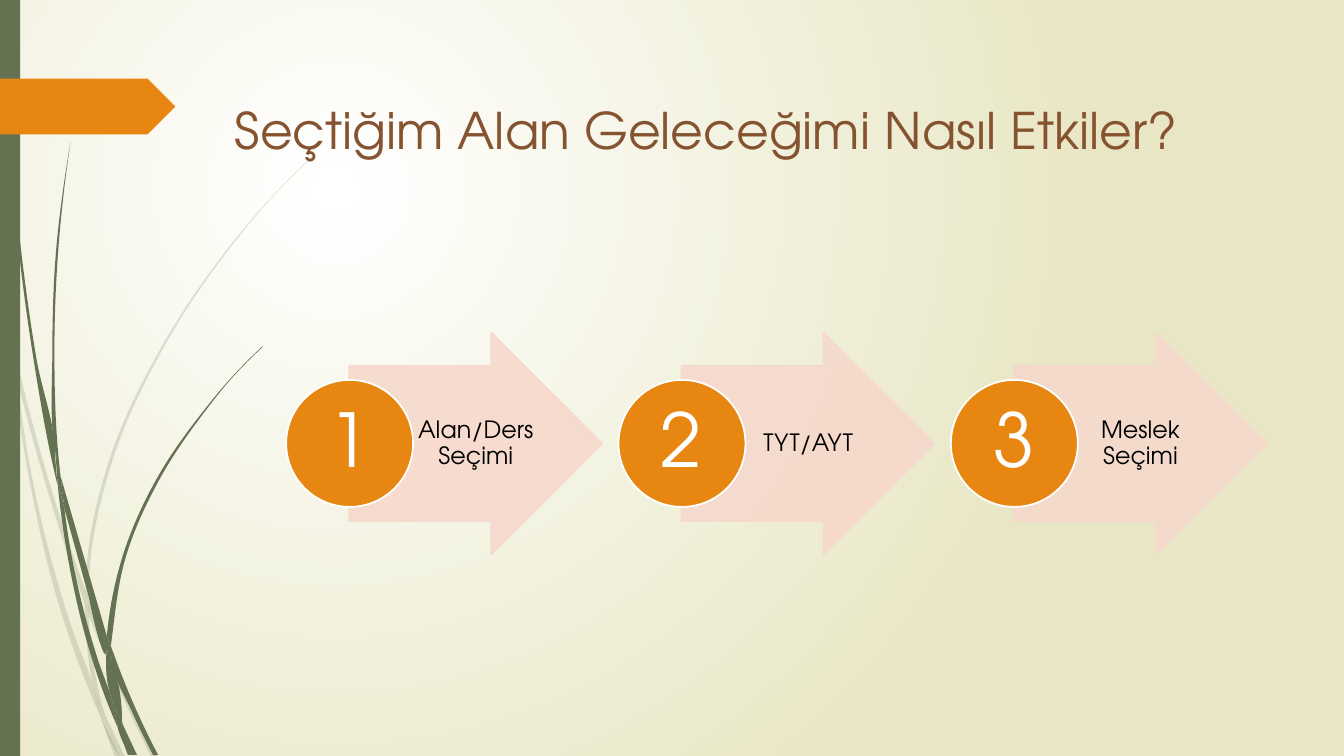
from dataclasses import dataclass
from math import hypot

from lxml import etree
from pptx import Presentation
from pptx.dml.color import RGBColor
from pptx.enum import shapes, text
from pptx.oxml.ns import qn
from pptx.util import Pt

Point = tuple[float, float]
Edge = list[Point]


@dataclass(frozen=True)
class Theme:
    font: str = "TeX Gyre Adventor"
    green: str = "647252"
    orange: str = "E78712"
    peach: str = "F6D9CC"
    brown: str = "865331"
    white: str = "FFFFFF"
    black: str = "000000"
    sand: str = "E8E6C4"
    title_size: float = 36
    label_size: float = 17
    number_size: float = 53
    outline: float = 1.25


@dataclass(frozen=True)
class Box:
    left: float
    top: float
    width: float
    height: float

    def lengths(self, offset: float = 0) -> list[int]:
        return [Pt(value) for value in (self.left + offset, self.top, self.width, self.height)]


@dataclass(frozen=True)
class Blade:
    """A piece of grass between two smooth edges, in points."""
    first: Edge
    second: Edge


THEME = Theme()
STEP_LABELS = ["Alan/Ders Seçimi", "TYT/AYT", "Meslek Seçimi"]
STEP_PITCH = 237.4
ARROW = Box(249.4, 237.6, 180.7, 158.4)
LABEL = Box(294.5, 261.4, 88.6, 110.9)
CIRCLE = Box(204.4, 271.4, 90.7, 90.7)
NUMBER = Box(217.4, 284.4, 64.1, 64.1)

PALE_GRASS = [
    Blade([(7.9, 252), (6.5, 231.8), (0, 203)], [(0, 215.3), (7.2, 247.7)]),
    Blade([(12.2, 270.7), (41.8, 375.8), (60.5, 431.3)], [(61.2, 421.9), (44.6, 374.4), (10.1, 248.4)]),
    Blade([(63.4, 439.2), (88.6, 499.7), (108, 540.7)],
          [(111.6, 540.7), (91.4, 498.2), (66.2, 437), (63.4, 429.1)]),
    Blade([(75.6, 511.9), (85.7, 540.7)], [(89.3, 540.7)]),
    Blade([(7.9, 252), (20.2, 338.4), (46.8, 447.1), (66.2, 499), (72.7, 514.1)],
          [(71.3, 509), (67, 491.8), (50.4, 445.7), (22.3, 337.7), (12.2, 270.7)]),
    Blade([(60.5, 431.3), (62.6, 465.1), (67, 491.8), (69.1, 498.2), (75.6, 511.9)],
          [(74.2, 508.3), (65.5, 465.1), (63.4, 439.2), (63.4, 437.8)]),
    Blade([(63.4, 429.1), (63.4, 420.5), (79.2, 332.6), (115.2, 251.3), (164.9, 176.4), (193, 142.6), (224.6, 110.9)],
          [(224.6, 110.2), (193, 141.8), (164.2, 175.7), (113.8, 250.6), (77, 331.9), (61.2, 420.5), (61.2, 421.9)]),
    Blade([(72.7, 514.1), (82.1, 540.7)], [(85.7, 540.7)]),
    Blade([(63.4, 439.2), (63.4, 429.1), (61.2, 421.9)], [(60.5, 431.3), (63.4, 437.8)]),
    Blade([(67, 491.8), (71.3, 509), (72.7, 514.1), (85.7, 540.7)], [(75.6, 511.9), (69.1, 498.2)]),
]
DARK_GRASS = [
    Blade([(2.2, 0), (2.9, 34.6), (5, 79.2), (12.2, 167.8), (23.8, 255.6), (40.3, 343.4), (41, 346.3)],
          [(39.6, 329), (39.6, 326.2), (25.9, 255.6), (13.7, 167), (5.8, 78.5), (3.6, 34.6), (2.9, 0)]),
    Blade([(43.2, 339.8), (46.1, 363.6)], [(63.4, 426.2), (76.3, 464.4), (76.3, 454.3), (67, 424.8), (43.2, 339.8)][:2]
          + [(76.3, 454.3)]),
    Blade([(79.2, 461.5), (79.9, 472.3), (95, 509.8), (109.4, 539.3)], [(113, 539.3), (97.9, 508.3), (81.4, 467.3)]),
    Blade([(41, 343.4), (49, 401), (67, 474.5), (79.9, 509.8), (84.2, 519.8)],
          [(83.5, 516.2), (79.2, 497.5), (70.6, 473), (51.8, 400.3), (46.1, 363.6)]),
    Blade([(43.2, 339.8), (41.8, 326.2), (38.9, 251.3), (41.8, 176.4), (45.4, 139), (50.4, 101.5)],
          [(50.4, 101.5), (44.6, 139), (40.3, 176.4), (37.4, 251.3), (39.6, 323.3), (43.2, 339.8)]),
    Blade([(87.8, 517.7), (95.8, 539.3)], [(97.9, 539.3)]),
    Blade([(41, 343.4), (46.1, 363.6)], [(43.2, 339.8), (39.6, 323.3)]),
    Blade([(79.2, 461.5), (79.9, 455.8), (90, 397.4), (113.8, 342.7), (147.6, 292.3), (166.3, 269.3), (187.9, 247.7)],
          [(187.2, 247.7), (166.3, 268.6), (146.9, 291.6), (112.3, 341.3), (87.8, 396.7), (76.3, 454.3)]),
    Blade([(84.2, 519.8), (91.4, 539.3)], [(94.3, 539.3)]),
    Blade([(76.3, 464.4), (79.2, 497.5), (83.5, 508.3), (87.8, 517.7)], [(87.1, 515.5), (79.9, 472.3), (78.5, 468.7)]),
    Blade([(76.3, 464.4), (79.9, 472.3)], [(79.2, 461.5), (76.3, 454.3)]),
    Blade([(79.2, 497.5), (83.5, 516.2), (84.2, 519.8), (93.6, 539.3)], [(95.8, 539.3), (87.8, 517.7), (83.5, 508.3)]),
]


def unit(dx: float, dy: float) -> Point:
    length = hypot(dx, dy) or 1
    return dx / length, dy / length


def curve_controls(edge: Edge) -> list[list[Point]]:
    """Give the two control points of each curve along a smooth edge."""
    pairs = list(zip(edge, edge[1:]))
    chords = [unit(b[0] - a[0], b[1] - a[1]) for a, b in pairs]
    sizes = [hypot(b[0] - a[0], b[1] - a[1]) for a, b in pairs]
    inner = [unit(*(u * sizes[i + 1] + v * sizes[i] for u, v in zip(chords[i], chords[i + 1])))
             for i in range(len(chords) - 1)]
    if not inner:
        inner = chords[:1]
    tangents = ([unit(*(2 * c - t for c, t in zip(chords[0], inner[0])))] + inner[:len(chords) - 1]
                + [unit(*(2 * c - t for c, t in zip(chords[-1], inner[-1])))]) if chords else []
    return [[(a[0] + s[0] * size / 3, a[1] + s[1] * size / 3), (b[0] - e[0] * size / 3, b[1] - e[1] * size / 3)]
            for (a, b), size, s, e in zip(pairs, sizes, tangents, tangents[1:])]


def paint(shape, fill: str, line: str | None = None, opacity: int = 100) -> None:
    shape.shadow.inherit = False
    shape.fill.solid()
    shape.fill.fore_color.rgb = RGBColor.from_string(fill)
    if line:
        shape.line.color.rgb = RGBColor.from_string(line)
        shape.line.width = Pt(THEME.outline)
    else:
        shape.line.fill.background()
    if opacity < 100:
        for color in shape.element.spPr.iter(qn("a:srgbClr")):
            etree.SubElement(color, qn("a:alpha")).set("val", str(opacity * 1000))


def add_grass(slide, blades: list[Blade], opacity: int = 100) -> None:
    group = slide.shapes.add_group_shape()
    for blade in blades:
        outline = [(Pt(x), Pt(y)) for x, y in blade.first + blade.second]
        left, top = (min(values) for values in zip(*outline))
        builder = group.shapes.build_freeform(*outline[0])
        builder.add_line_segments(outline[1:], close=True)
        shape = builder.convert_to_shape()
        controls = curve_controls(blade.first) + [[]] + curve_controls(blade.second)
        for line, points in zip(list(shape.element.iter(qn("a:lnTo"))), controls):
            if points:
                curve = etree.Element(qn("a:cubicBezTo"))
                for x, y in points:
                    etree.SubElement(curve, qn("a:pt"), {"x": str(Pt(x) - left), "y": str(Pt(y) - top)})
                line.getparent().replace(line, curve)
                curve.append(line[0])
        paint(shape, THEME.green, opacity=opacity)


def write(frame, words: str, size: float, color: str, centred: bool = True) -> None:
    frame.text = words
    frame.word_wrap = True
    frame.auto_size = text.MSO_AUTO_SIZE.NONE
    frame.vertical_anchor = text.MSO_ANCHOR.MIDDLE if centred else text.MSO_ANCHOR.TOP
    paragraph = frame.paragraphs[0]
    paragraph.alignment = text.PP_ALIGN.CENTER if centred else text.PP_ALIGN.LEFT
    paragraph.line_spacing = 0.9 if centred else 1.0
    font = paragraph.runs[0].font
    font.name, font.size = THEME.font, Pt(size)
    font.color.rgb = RGBColor.from_string(color)


def add_text(slide, lengths: list[int], words: str, size: float, color: str, insets: list[float]) -> None:
    frame = slide.shapes.add_textbox(*lengths).text_frame
    write(frame, words, size, color)
    frame.margin_left, frame.margin_top, frame.margin_right, frame.margin_bottom = map(Pt, insets)


def add_step(slide, index: int, label: str) -> None:
    offset = index * STEP_PITCH
    arrow = slide.shapes.add_shape(shapes.MSO_SHAPE.RIGHT_ARROW, *ARROW.lengths(offset))
    arrow.adjustments[0], arrow.adjustments[1] = 0.7, 0.5
    paint(arrow, THEME.peach, THEME.peach, opacity=90)
    add_text(slide, LABEL.lengths(offset), label, THEME.label_size, THEME.black, [3.6, 0.7, 1.4, 0.7])
    circle = slide.shapes.add_shape(shapes.MSO_SHAPE.OVAL, *CIRCLE.lengths(offset))
    paint(circle, THEME.orange, THEME.white)
    add_text(slide, NUMBER.lengths(offset), str(index + 1), THEME.number_size, THEME.white, [2.9] * 4)


def set_background(slide) -> None:
    fill = slide.background.fill
    fill.gradient()
    for stop, color in zip(fill.gradient_stops, (THEME.white, THEME.sand)):
        stop.color.rgb = RGBColor.from_string(color)
    gradient = slide.element.find(".//" + qn("a:gradFill"))
    gradient.remove(gradient.find(qn("a:lin")))
    circle = etree.SubElement(gradient, qn("a:path"), {"path": "circle"})
    etree.SubElement(circle, qn("a:fillToRect"), {"l": "50000", "t": "50000", "r": "100000", "b": "100000"})


def main() -> None:
    presentation = Presentation()
    presentation.slide_width, presentation.slide_height = Pt(960), Pt(540)
    slide = presentation.slides.add_slide(presentation.slide_layouts[5])
    set_background(slide)
    add_grass(slide, PALE_GRASS, opacity=20)
    add_grass(slide, DARK_GRASS)
    for kind, box, color in ((shapes.MSO_SHAPE.RECTANGLE, Box(0, 0, 14.4, 540), THEME.green),
                             (shapes.MSO_SHAPE.PENTAGON, Box(0, 56.2, 125.3, 39.8), THEME.orange)):
        paint(slide.shapes.add_shape(kind, *box.lengths()), color)
    title = slide.shapes.title
    title.left, title.top, title.width, title.height = Box(160.6, 67, 702, 100.8).lengths()
    write(title.text_frame, "Seçtiğim Alan Geleceğimi Nasıl Etkiler?", THEME.title_size, THEME.brown, centred=False)
    for index, label in enumerate(STEP_LABELS):
        add_step(slide, index, label)
    presentation.save("out.pptx")


if __name__ == "__main__":
    main()
